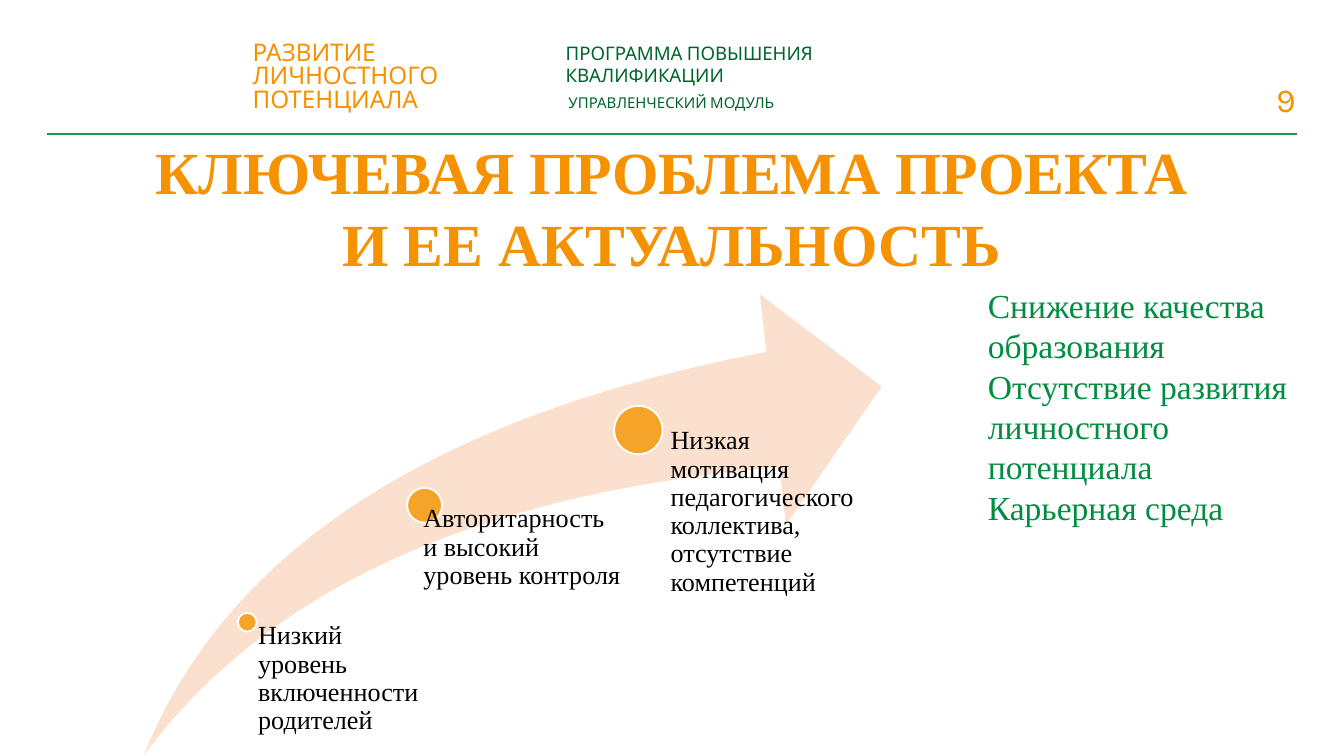
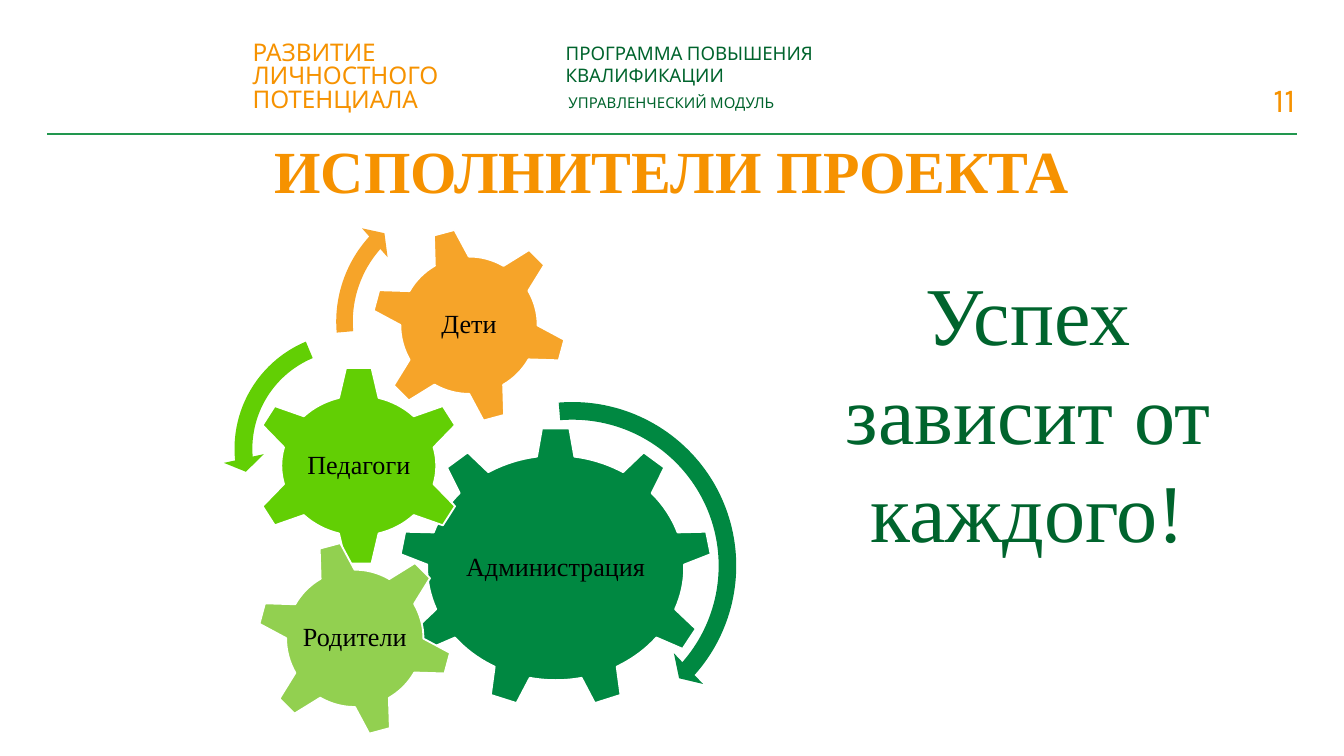
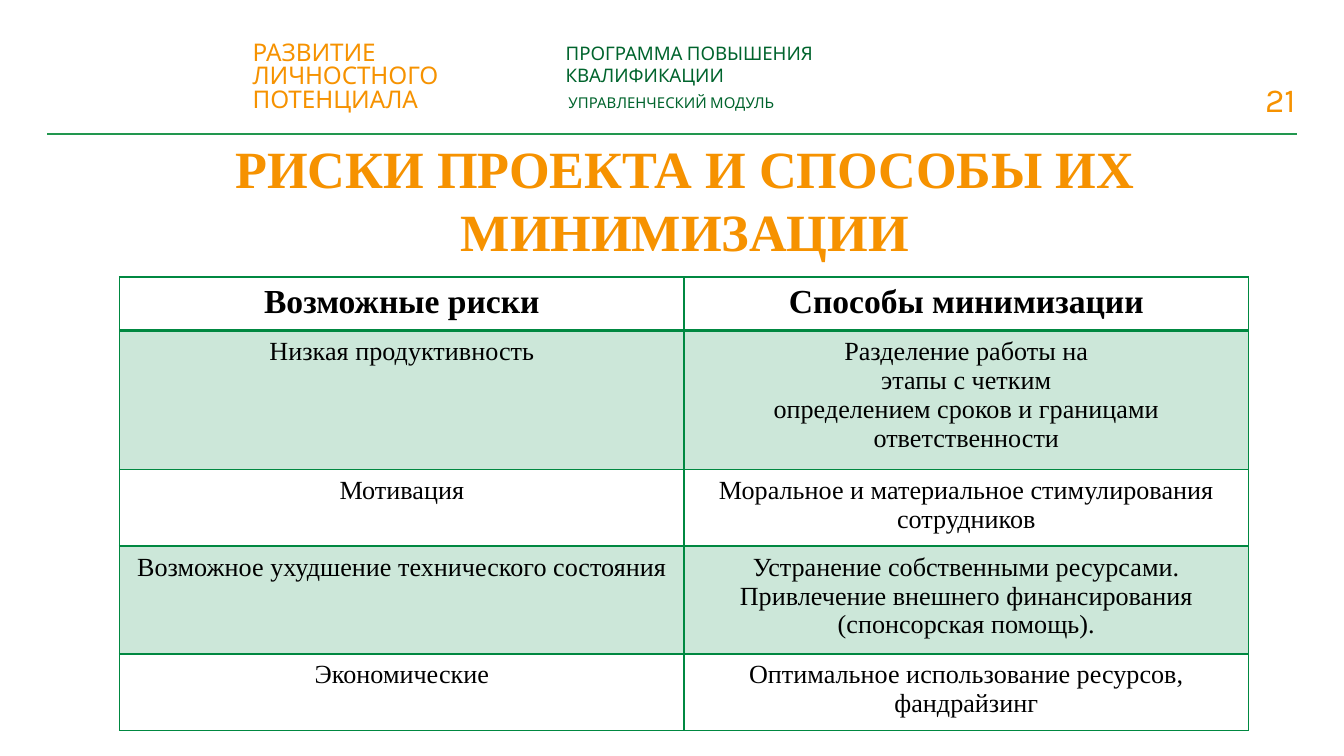
"""Builds three project slides: key problem, people involved, risks."""
from lxml import etree
from pptx import Presentation
from pptx.dml.color import RGBColor
from pptx.enum.shapes import MSO_CONNECTOR, MSO_SHAPE
from pptx.enum.text import MSO_ANCHOR, MSO_AUTO_SIZE, PP_ALIGN
from pptx.oxml.ns import qn
from pptx.util import Inches, Pt

LEFT, CENTER, RIGHT = PP_ALIGN.LEFT, PP_ALIGN.CENTER, PP_ALIGN.RIGHT
TOP, MIDDLE = MSO_ANCHOR.TOP, MSO_ANCHOR.MIDDLE
GEAR_6, GEAR_9 = MSO_SHAPE.GEAR_6, MSO_SHAPE.GEAR_9
ARC, LEFT_ARC = MSO_SHAPE.CIRCULAR_ARROW, MSO_SHAPE.LEFT_CIRCULAR_ARROW
SWOOSH, DOT = MSO_SHAPE.SWOOSH_ARROW, MSO_SHAPE.OVAL

SERIF, SANS = "Times New Roman", "Karla"
ORANGE, AMBER, PEACH = "F69200", "F6A429", "FBE0CD"
DARK_GREEN, GREEN, TEXT_GREEN = "00642D", "008841", "008D3F"
LIME, PALE_GREEN, RULE_GREEN = "62CF04", "92D050", "22974F"
BLACK, WHITE = "000000", "FFFFFF"

HEADER = [
    ("РАЗВИТИЕ ЛИЧНОСТНОГО ПОТЕНЦИАЛА", (1.88, 0.32, 2.27, 0.53), 13, ORANGE, 0.8),
    ("ПРОГРАММА ПОВЫШЕНИЯ КВАЛИФИКАЦИИ", (4.21, 0.31, 2.34, 0.34), 10, DARK_GREEN, None),
    ("УПРАВЛЕНЧЕСКИЙ МОДУЛЬ", (4.23, 0.7, 1.7, 0.14), 8, DARK_GREEN, None),
]
NUMBER_BOX = (9.03, 0.59, 0.61, 0.23)

PROBLEM_TITLE = ["КЛЮЧЕВАЯ ПРОБЛЕМА ПРОЕКТА", "И ЕЕ АКТУАЛЬНОСТЬ"]
CAUSES = [
    ("Низкий уровень включенности родителей",
     (1.77, 4.56, 0.14), (1.84, 4.63, 1.28, 0.99), 0.08),
    ("Авторитарность и высокий уровень контроля",
     (3.03, 3.63, 0.26), (3.01, 3.76, 1.62, 1.87), 0.14),
    ("Низкая мотивация педагогического коллектива, отсутствие компетенций",
     (4.57, 3.02, 0.36), (4.8, 3.18, 1.57, 2.38), 0.19),
]
EFFECTS = ["Снижение качества образования",
           "Отсутствие развития личностного потенциала\vКарьерная среда"]

TEAM = [
    ("Администрация", GEAR_9, (2.97, 3.18, 2.33, 2.09), 0, GREEN, (1.43, 1.07)),
    ("Педагоги", GEAR_6, (1.87, 2.72, 1.6, 1.49), 0, LIME, (0.82, 0.74)),
    ("Дети", GEAR_6, (2.76, 1.69, 1.46, 1.46), 345, AMBER, (0.82, 0.82)),
    ("Родители", GEAR_6, (1.91, 4.02, 1.46, 1.46), 345, PALE_GREEN, (0.82, 0.82)),
]
TURNS = [
    (ARC, (2.95, 2.9, 2.62), GREEN, (0.05, 2.99, 24.94, 159.1, 0.06)),
    (LEFT_ARC, (1.66, 2.39, 1.9), LIME, (0.07, 4.3, 104.89, 148.38, 0.08)),
    (ARC, (2.42, 1.37, 2.05), AMBER, (0.06, 3.94, 133.14, 105.08, 0.07)),
]

RISKS = [
    (0.4, "Возможные риски", "Способы минимизации"),
    (1.03, "Низкая продуктивность",
     "Разделение работы на\nэтапы с четким\n"
     "определением сроков и границами ответственности"),
    (0.57, "Мотивация", "Моральное и материальное стимулирования сотрудников"),
    (0.8, "Возможное ухудшение технического состояния",
     "Устранение собственными ресурсами.\n"
     "Привлечение внешнего финансирования (спонсорская помощь)."),
    (0.57, "Экономические", "Оптимальное использование ресурсов, фандрайзинг"),
]


def rgb(color):
    return RGBColor.from_string(color)


def inches(box):
    return [Inches(length) for length in box]


def write(frame, lines, size, color, font=SERIF, align=LEFT, bold=False, spacing=None):
    frame.text = "\n".join(lines)
    for paragraph in frame.paragraphs:
        paragraph.alignment = align
        if spacing:
            paragraph.line_spacing = spacing
        for run in paragraph.runs:
            run.font.name, run.font.size, run.font.bold = font, Pt(size), bold
            run.font.color.rgb = rgb(color)


def add_label(slide, text, box, size, color, insets=(0, 0, 0, 0), anchor=TOP, **style):
    frame = slide.shapes.add_textbox(*inches(box)).text_frame
    frame.word_wrap, frame.vertical_anchor = True, anchor
    (frame.margin_left, frame.margin_top,
     frame.margin_right, frame.margin_bottom) = inches(insets)
    write(frame, [text], size, color, **style)


def add_figure(slide, kind, box, fill, outline=None, turn=0, adjust=()):
    figure = slide.shapes.add_shape(kind, *inches(box))
    figure.shadow.inherit = False
    figure.rotation = turn
    figure.fill.solid()
    figure.fill.fore_color.rgb = rgb(fill)
    if outline:
        figure.line.color.rgb = rgb(outline)
        figure.line.width = Pt(1)
    else:
        figure.line.fill.background()
    for index, value in enumerate(adjust):
        figure.adjustments[index] = value


def place(holder, box):
    holder.left, holder.top, holder.width, holder.height = inches(box)
    holder.text_frame.word_wrap = True
    holder.text_frame.auto_size = MSO_AUTO_SIZE.NONE


def start_slide(deck, layout, number, title, title_box, title_size=32):
    slide = deck.slides.add_slide(deck.slide_layouts[layout])
    rule = slide.shapes.add_connector(MSO_CONNECTOR.STRAIGHT, *inches((0.35, 1, 9.65, 1)))
    rule.line.color.rgb = rgb(RULE_GREEN)
    rule.line.width = Pt(1)
    etree.SubElement(rule._element.spPr, qn("a:effectLst"))
    for text, box, size, color, spacing in HEADER:
        add_label(slide, text, box, size, color, font=SANS, spacing=spacing)
    add_label(slide, str(number), NUMBER_BOX, 18, ORANGE, font=SANS, align=RIGHT)
    place(slide.shapes.title, title_box)
    slide.shapes.title.text_frame.vertical_anchor = MIDDLE
    write(slide.shapes.title.text_frame, title, title_size, ORANGE, align=CENTER, bold=True)
    return slide


def fill_body(slide, lines, box, size, color, align=LEFT):
    body = slide.placeholders[1]
    place(body, box)
    write(body.text_frame, lines, size, color, align=align)
    for paragraph in body.text_frame.paragraphs:
        paragraph.space_before = Pt(0)
        properties = paragraph._p.get_or_add_pPr()
        properties.set("marL", "0")
        properties.set("indent", "0")
        etree.SubElement(properties, qn("a:buNone"))


def build_problem(deck):
    slide = start_slide(deck, 1, 9, PROBLEM_TITLE, (0, 1.01, 10, 1.06))
    add_figure(slide, SWOOSH, (1.07, 2.19, 5.49, 3.43), PEACH, adjust=(0.25, 0.25))
    for cause, (left, top, size), box, indent in CAUSES:
        add_figure(slide, DOT, (left, top, size, size), AMBER, WHITE)
        add_label(slide, cause, box, 14, BLACK, insets=(indent, 0, 0, 0), spacing=0.9)
    fill_body(slide, EFFECTS, (7.25, 2.07, 2.5, 1.92), 18, TEXT_GREEN)


def build_team(deck):
    slide = start_slide(deck, 1, 11, ["ИСПОЛНИТЕЛИ ПРОЕКТА"], (0, 0.91, 10, 0.7))
    for member, gear, box, turn, color, (wide, high) in TEAM:
        left, top, width, height = box
        add_figure(slide, gear, box, color, WHITE, turn)
        inner = (left + (width - wide) / 2, top + (height - high) / 2, wide, high)
        add_label(slide, member, inner, 14, BLACK, insets=(0.02,) * 4,
                  anchor=MIDDLE, align=CENTER, spacing=0.9)
    for kind, (left, top, size), color, adjust in TURNS:
        add_figure(slide, kind, (left, top, size, size), color, adjust=adjust)
    fill_body(slide, ["Успех зависит от каждого!"], (5.99, 1.91, 3.32, 2.32),
              44, DARK_GREEN, CENTER)


def add_border(cell, side, points):
    edge = etree.SubElement(cell._tc.get_or_add_tcPr(), qn("a:ln" + side),
                            w=str(Pt(points)))
    paint = etree.SubElement(edge, qn("a:solidFill"))
    etree.SubElement(paint, qn("a:srgbClr"), val=GREEN)


def build_risks(deck):
    slide = start_slide(deck, 5, 21, ["РИСКИ ПРОЕКТА И СПОСОБЫ ИХ МИНИМИЗАЦИИ"],
                        (0.19, 0.98, 9.81, 1), 28)
    table = slide.shapes.add_table(len(RISKS), 2, *inches((0.89, 2.06, 8.4, 3.37))).table
    table.first_row = table.horz_banding = False
    for row, (height, *texts) in enumerate(RISKS):
        table.rows[row].height = Inches(height)
        for column, text in enumerate(texts):
            cell = table.cell(row, column)
            write(cell.text_frame, [text], 14 if row else 18, BLACK,
                  align=CENTER, bold=row == 0)
            for side in "LRTB":
                under_head = (row, side) in ((0, "B"), (1, "T"))
                add_border(cell, side, 2 if under_head else 1)
            if row % 2:
                cell.fill.solid()
                cell.fill.fore_color.rgb = rgb(GREEN)
                tint = cell._tc.tcPr.find(qn("a:solidFill")).find(qn("a:srgbClr"))
                etree.SubElement(tint, qn("a:alpha"), val="20000")
            else:
                cell.fill.background()


def main():
    deck = Presentation()
    deck.slide_width = Inches(10)
    deck.slide_height = deck.slide_width * 9 // 16
    build_problem(deck)
    build_team(deck)
    build_risks(deck)
    deck.save("out.pptx")


if __name__ == "__main__":
    main()
